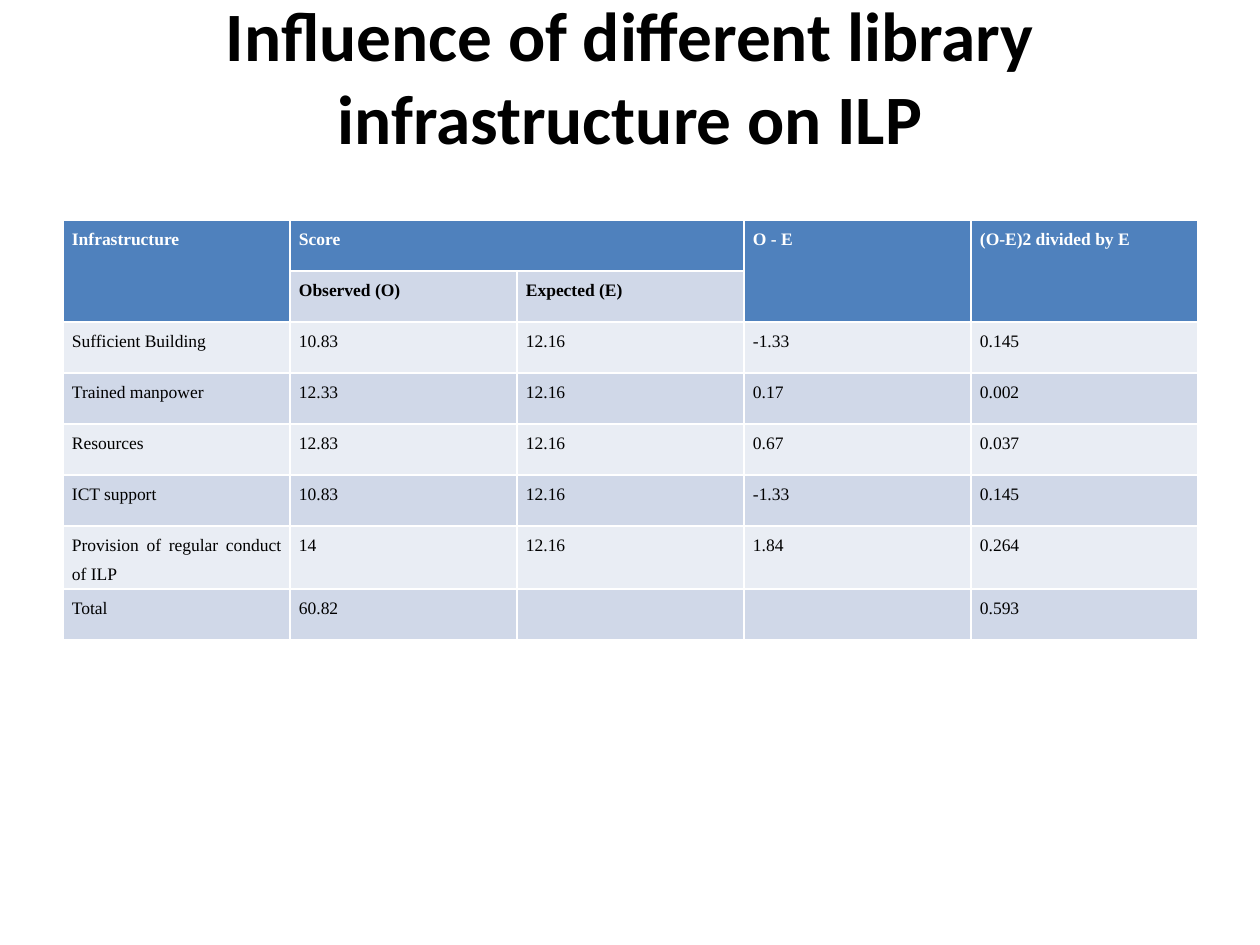
from pptx import Presentation
from pptx.dml.color import RGBColor
from pptx.enum.text import MSO_ANCHOR as Anchor, PP_ALIGN as Align
from pptx.util import Emu, Pt

PX = 914400 / 126
COLORS = {"header": "4F81BD", "dark": "D0D8E8", "light": "E9EDF4",
          "black": "000000", "white": "FFFFFF"}

ROWS = [
    ["Infrastructure", "Score", "", "O - E", "(O-E)2 divided by E"],
    ["", "Observed (O)", "Expected (E)", "", ""],
    ["Sufficient Building", "10.83", "12.16", "-1.33", "0.145"],
    ["Trained manpower", "12.33", "12.16", "0.17", "0.002"],
    ["Resources", "12.83", "12.16", "0.67", "0.037"],
    ["ICT support", "10.83", "12.16", "-1.33", "0.145"],
    ["Provision of regular conduct of ILP", "14", "12.16", "1.84", "0.264"],
    ["Total", "60.82", "", "", "0.593"],
]
MERGES = [((0, 0), (1, 0)), ((0, 1), (0, 2)), ((0, 3), (1, 3)), ((0, 4), (1, 4))]


def px(length):
    return Emu(round(length * PX))


def color(name):
    return RGBColor.from_string(COLORS[name])


class SlideBuilder:
    title_font = "Calibri"
    table_font = "Times New Roman"

    def __init__(self, slide):
        self.slide = slide

    def format_runs(self, paragraph, name, size, tint, bold):
        for run in paragraph.runs:
            run.font.name = name
            run.font.size = Pt(size)
            run.font.bold = bold
            run.font.color.rgb = color(tint)

    def title(self, text, left, top, width, height, lift):
        shape = self.slide.shapes.add_textbox(px(left), px(top), px(width), px(height))
        text_frame = shape.text_frame
        text_frame.word_wrap = True
        text_frame.vertical_anchor = Anchor.MIDDLE
        text_frame.margin_top = px(6)
        text_frame.margin_bottom = px(6 + lift)
        text_frame.text = text
        paragraph = text_frame.paragraphs[0]
        paragraph.alignment = Align.CENTER
        self.format_runs(paragraph, self.title_font, 39.6, "black", True)

    def cell(self, cell, text, fill, tint, bold):
        cell.fill.solid()
        cell.fill.fore_color.rgb = color(fill)
        cell.margin_left = cell.margin_right = px(9)
        cell.margin_top = cell.margin_bottom = 0
        if text:
            cell.text_frame.text = text
            paragraph = cell.text_frame.paragraphs[0]
            paragraph.alignment = Align.JUSTIFY
            paragraph.line_spacing = 1.5
            self.format_runs(paragraph, self.table_font, 10, tint, bold)

    def table(self, rows, merges, left, top, column_width, row_height):
        row_count, column_count = len(rows), len(rows[0])
        table = self.slide.shapes.add_table(
            row_count, column_count, px(left), px(top),
            px(column_width * column_count), px(row_height * row_count)).table
        for column in table.columns:
            column.width = px(column_width)
        for row in table.rows:
            row.height = px(row_height)
        for first, last in merges:
            table.cell(*first).merge(table.cell(*last))
        for row_index, row in enumerate(rows):
            for column_index, text in enumerate(row):
                cell = table.cell(row_index, column_index)
                is_header = row_index == 0 or cell.is_spanned
                band = "dark" if row_index % 2 else "light"
                self.cell(cell, text, "header" if is_header else band,
                          "white" if is_header else "black", row_index < 2)


def main():
    presentation = Presentation()
    presentation.slide_width, presentation.slide_height = px(1260), px(945)
    builder = SlideBuilder(presentation.slides.add_slide(presentation.slide_layouts[6]))
    builder.title("Influence of different library infrastructure on ILP",
                  63, 38, 1134, 157, lift=83)
    builder.table(ROWS, MERGES, 63, 220, column_width=227, row_height=51)
    presentation.save("out.pptx")


if __name__ == "__main__":
    main()
